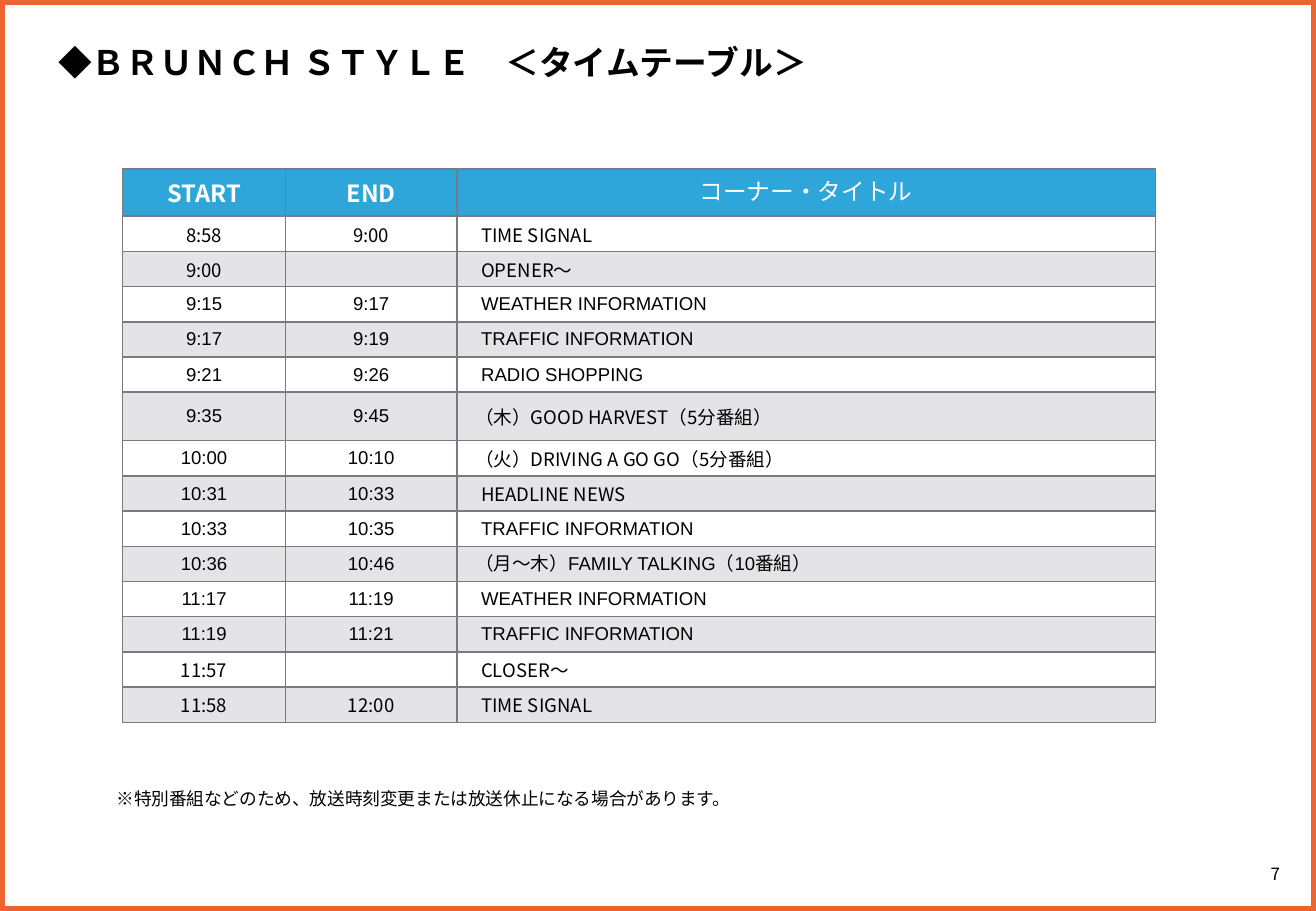
from lxml import etree
from pptx import Presentation
from pptx.dml.color import RGBColor
from pptx.enum.shapes import MSO_SHAPE
from pptx.enum.text import MSO_ANCHOR, PP_ALIGN
from pptx.oxml.ns import qn
from pptx.util import Inches, Pt

LEFT, CENTER = PP_ALIGN.LEFT, PP_ALIGN.CENTER
MIDDLE = MSO_ANCHOR.MIDDLE
RECTANGLE = MSO_SHAPE.RECTANGLE

ORANGE = RGBColor(0xEB, 0x64, 0x32)
BLUE = RGBColor(0x2E, 0xA6, 0xDA)
BAND = RGBColor(0xE4, 0xE4, 0xE6)
GRID = RGBColor(0x79, 0x7B, 0x84)
WHITE = RGBColor(0xFF, 0xFF, 0xFF)
BLACK = RGBColor(0, 0, 0)

NOTO, ARIAL = "Noto Sans CJK JP", "Arial"
TITLE = {"name": NOTO, "size": Pt(20), "bold": True}
NOTE = {"name": NOTO, "size": Pt(10.5), "bold": False}
PAGE = {"name": NOTO, "size": Pt(10), "bold": False}
HEADING = {"name": NOTO, "size": Pt(14), "bold": True}
HEADING_JA = {"name": ARIAL, "size": Pt(14), "bold": False}
BODY = {"name": NOTO, "size": Pt(11), "bold": False}
BODY_ARIAL = {**BODY, "name": ARIAL}

HEADINGS = [("START", HEADING), ("END", HEADING), ("コーナー・タイトル", HEADING_JA)]
COLUMN_WIDTHS = [1.34, 1.41, 5.75]
HEADING_HEIGHT, ROW_HEIGHT, TALL_HEIGHT = 0.39, 0.29, 0.4
TALL_START = "9:35"
PROGRAMME = [
    ("8:58", "9:00", "TIME SIGNAL", BODY, BODY),
    ("9:00", "", "OPENER〜", BODY, BODY),
    ("9:15", "9:17", "WEATHER INFORMATION", BODY_ARIAL, BODY_ARIAL),
    ("9:17", "9:19", "TRAFFIC INFORMATION", BODY_ARIAL, BODY_ARIAL),
    ("9:21", "9:26", "RADIO SHOPPING", BODY_ARIAL, BODY_ARIAL),
    ("9:35", "9:45", "（木）GOOD HARVEST（5分番組）", BODY_ARIAL, BODY),
    ("10:00", "10:10", "（火）DRIVING A GO GO（5分番組）", BODY_ARIAL, BODY),
    ("10:31", "10:33", "HEADLINE NEWS", BODY_ARIAL, BODY),
    ("10:33", "10:35", "TRAFFIC INFORMATION", BODY_ARIAL, BODY_ARIAL),
    ("10:36", "10:46", "（月〜木）FAMILY TALKING（10番組）", BODY_ARIAL, BODY_ARIAL),
    ("11:17", "11:19", "WEATHER INFORMATION", BODY_ARIAL, BODY_ARIAL),
    ("11:19", "11:21", "TRAFFIC INFORMATION", BODY_ARIAL, BODY_ARIAL),
    ("11:57", "", "CLOSER～", BODY, BODY),
    ("11:58", "12:00", "TIME SIGNAL", BODY, BODY),
]


def write(paragraph, text, style, color=BLACK, align=LEFT):
    """Write one styled run, or size the paragraph when it is empty."""
    paragraph.alignment = align
    if not text:
        end = etree.SubElement(paragraph._p, qn("a:endParaRPr"))
        end.set("sz", str(int(style["size"].pt * 100)))
        return
    run = paragraph.add_run()
    run.text = text
    for attribute, value in style.items():
        setattr(run.font, attribute, value)
    run.font.color.rgb = color
    east_asian = etree.SubElement(run._r.get_or_add_rPr(), qn("a:ea"))
    east_asian.set("typeface", style["name"])


def add_label(slide, box, text, style, align=LEFT):
    """Add a wrapped, vertically centred text box."""
    frame = slide.shapes.add_textbox(*map(Inches, box)).text_frame
    frame.word_wrap = True
    frame.vertical_anchor = MIDDLE
    write(frame.paragraphs[0], text, style, align=align)


def add_frame(slide, width, height):
    """Add the orange outline around the slide."""
    frame = slide.shapes.add_shape(RECTANGLE, 0, 0, width, height)
    frame.shadow.inherit = False
    frame.fill.background()
    frame.line.color.rgb = ORANGE
    frame.line.width = Pt(6)


def add_borders(cell):
    """Draw a grey line on all four sides of a cell."""
    properties = cell._tc.get_or_add_tcPr()
    for position, side in enumerate(("a:lnL", "a:lnR", "a:lnT", "a:lnB")):
        line = etree.Element(qn(side), w=str(Pt(1)))
        fill = etree.SubElement(line, qn("a:solidFill"))
        etree.SubElement(fill, qn("a:srgbClr"), val=str(GRID))
        properties.insert(position, line)


def fill_cell(cell, text, style, fill, color=BLACK, align=CENTER, indent=0):
    """Set the text, fill, margins and borders of a cell."""
    layout = {"vertical_anchor": MIDDLE, "margin_left": Inches(indent),
              "margin_right": 0, "margin_top": 0, "margin_bottom": 0}
    for attribute, value in layout.items():
        setattr(cell, attribute, value)
    cell.fill.solid()
    cell.fill.fore_color.rgb = fill
    write(cell.text_frame.paragraphs[0], text, style, color, align)
    add_borders(cell)


def add_timetable(slide):
    """Add the timetable with its heading and banded rows."""
    heights = [HEADING_HEIGHT] + [
        TALL_HEIGHT if entry[0] == TALL_START else ROW_HEIGHT for entry in PROGRAMME]
    timetable = slide.shapes.add_table(
        len(heights), len(COLUMN_WIDTHS), Inches(1.01), Inches(1.39),
        Inches(sum(COLUMN_WIDTHS)), Inches(sum(heights))).table
    for column, width in zip(timetable.columns, COLUMN_WIDTHS):
        column.width = Inches(width)
    for row, height in zip(timetable.rows, heights):
        row.height = Inches(height)
    for column, (heading, style) in enumerate(HEADINGS):
        fill_cell(timetable.cell(0, column), heading, style, BLUE, WHITE)
    for row, (start, end, corner, time_style, corner_style) in enumerate(PROGRAMME, 1):
        fill = WHITE if row % 2 else BAND
        fill_cell(timetable.cell(row, 0), start, time_style, fill)
        fill_cell(timetable.cell(row, 1), end, time_style, fill)
        indent = 0.15 if corner.startswith("（") else 0.2
        fill_cell(timetable.cell(row, 2), corner, corner_style, fill,
                  align=LEFT, indent=indent)


def main():
    """Build the timetable slide."""
    deck = Presentation()
    deck.slide_width, deck.slide_height = Inches(10.83), Inches(7.5)
    slide = deck.slides.add_slide(deck.slide_layouts[6])
    add_label(slide, (10.16, 7.02, 0.67, 0.35), "7", PAGE, CENTER)
    add_frame(slide, deck.slide_width, deck.slide_height)
    add_label(slide, (0.38, 0.29, 7.01, 0.44),
              "◆ＢＲＵＮＣＨ ＳＴＹＬＥ　＜タイムテーブル＞", TITLE)
    add_timetable(slide)
    add_label(slide, (0.86, 6.43, 8.62, 0.28),
              "※特別番組などのため、放送時刻変更または放送休止になる場合があります。", NOTE)
    deck.save("out.pptx")


if __name__ == "__main__":
    main()
